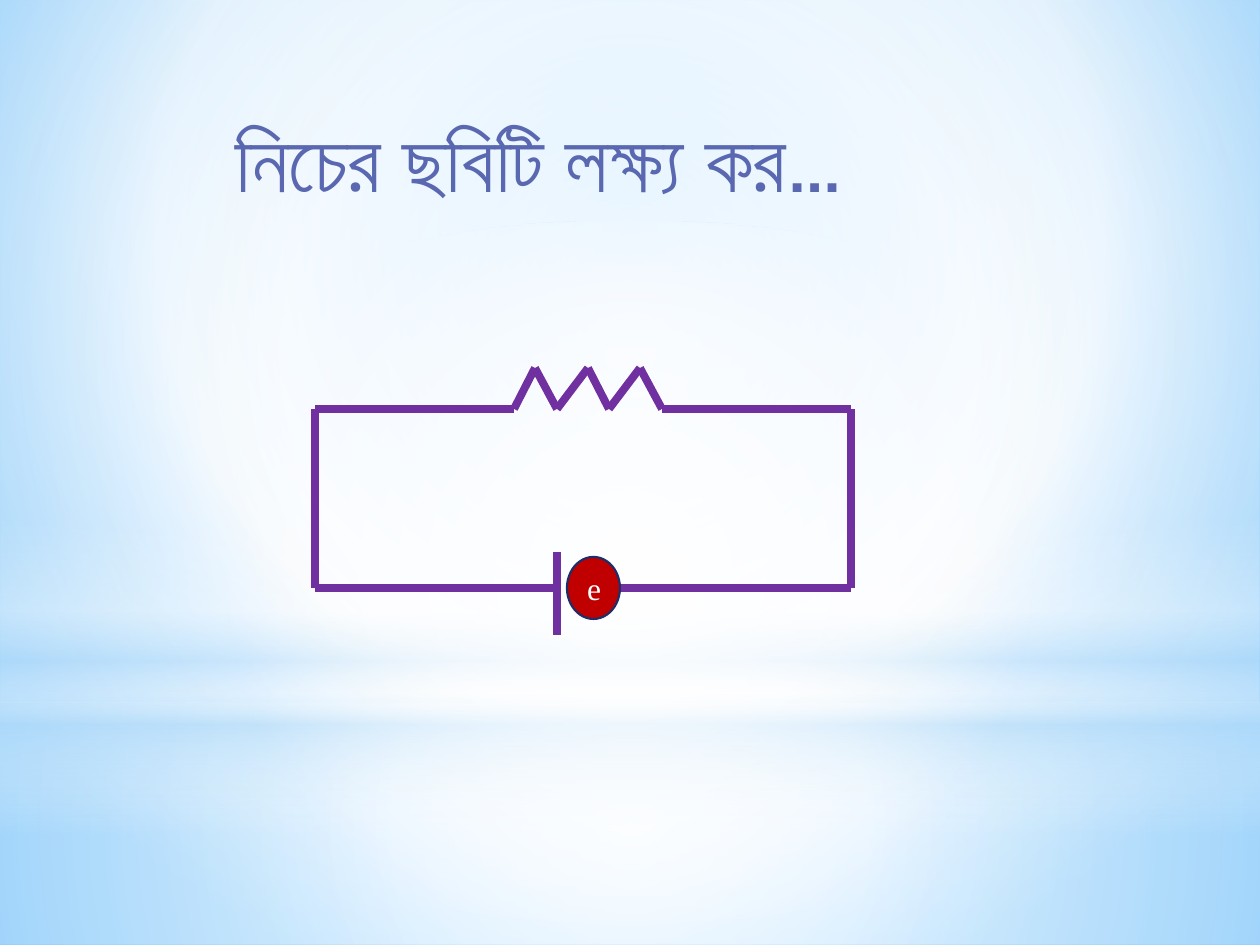
import dataclasses
import itertools

import lxml.etree
import pptx
import pptx.dml.color
import pptx.enum.shapes
import pptx.enum.text
import pptx.oxml.ns
import pptx.util

PX = 914400 / 126
SHAPES = pptx.enum.shapes.MSO_SHAPE
CENTRE = (50, 50, 50, 50)


@dataclasses.dataclass(frozen=True)
class Theme:
    """Colours, fonts and sizes of the slide."""
    title: str = "5968B0"
    wire: str = "7030A0"
    source: str = "C00000"
    source_edge: str = "1F2E69"
    white: str = "FFFFFF"
    mist: str = "B4DCFA"
    sky: str = "9ED5FF"
    deep_sky: str = "5BB9FF"
    title_font: str = "Arial"
    label_font: str = "Times New Roman"
    title_size: int = 48
    label_size: int = 18
    wire_width: float = 4.5
    edge_width: float = 1.25


THEME = Theme()


def px(length):
    """Turn px into EMU."""
    return pptx.util.Emu(round(length * PX))


def rgb(colour):
    """Turn a hex string into a colour."""
    return pptx.dml.color.RGBColor.from_string(colour)


def add_child(parent, tag, **attributes):
    """Append a drawing element with the given attributes."""
    values = {name: str(value) for name, value in attributes.items()}
    return lxml.etree.SubElement(parent, pptx.oxml.ns.qn(tag), values)


def set_gradient(fill, properties, stops, focus=None):
    """Fill with (position, colour, opacity) stops, radial around focus or downward."""
    fill.background()
    empty = properties.find(pptx.oxml.ns.qn("a:noFill"))
    gradient = add_child(properties, "a:gradFill", rotWithShape=1)
    properties.replace(empty, gradient)
    stop_list = add_child(gradient, "a:gsLst")
    for position, colour, opacity in stops:
        stop = add_child(stop_list, "a:gs", pos=position * 1000)
        tint = add_child(stop, "a:srgbClr", val=colour)
        if opacity < 100:
            add_child(tint, "a:alpha", val=opacity * 1000)
    if focus:
        radial = add_child(gradient, "a:path", path="circle")
        edges = {side: edge * 1000 for side, edge in zip("ltrb", focus)}
        add_child(radial, "a:fillToRect", **edges)
    else:
        add_child(gradient, "a:lin", ang=5400000, scaled=0)


def add_plain_shape(slide, kind, box):
    """Add a preset shape without shadow."""
    shape = slide.shapes.add_shape(kind, *map(px, box))
    shape.shadow.inherit = False
    return shape


def add_backdrop(slide, box):
    """Lay the sky gradient and its glowing layers in the box."""
    left, top, width, height = box
    white, mist = THEME.white, THEME.mist
    sky = [(0, THEME.sky, 100), (60, white, 100), (100, THEME.deep_sky, 100)]
    background = slide.background.fill
    background.background()
    properties = slide.element.find(".//" + pptx.oxml.ns.qn("p:bgPr"))
    set_gradient(background, properties, sky, (20, 10, 20, 60))
    horizon = 703
    layers = [
        (SHAPES.RECTANGLE, horizon, height - horizon, CENTRE,
         [(0, white, 91), (37, white, 76), (100, mist, 79)]),
        (SHAPES.RECTANGLE, 0, horizon, CENTRE,
         [(0, white, 89), (48, white, 62), (100, mist, 79)]),
        (SHAPES.RECTANGLE, 519, 315, None,
         [(0, white, 0), (29, white, 30), (45, mist, 40),
          (55, white, 26), (65, mist, 60), (100, white, 0)]),
        (SHAPES.OVAL, 221, horizon, CENTRE, [(0, white, 100), (56, white, 0)]),
    ]
    for kind, offset, layer_height, focus, stops in layers:
        layer = add_plain_shape(slide, kind, (left, top + offset, width, layer_height))
        layer.line.fill.background()
        set_gradient(layer.fill, layer.element.spPr, stops, focus)


def add_run(paragraph, text, font_name, size, colour):
    """Add one formatted run."""
    run = paragraph.add_run()
    run.text = text
    run.font.name = font_name
    run.font.size = pptx.util.Pt(size)
    run.font.color.rgb = rgb(colour)


def add_title(slide, box, text):
    """Place the title placeholder in the box, in front of the backdrop."""
    title = slide.shapes.title
    title.element.getparent().append(title.element)
    title.left, title.top, title.width, title.height = map(px, box)
    frame = title.text_frame
    frame.word_wrap = True
    frame.auto_size = pptx.enum.text.MSO_AUTO_SIZE.SHAPE_TO_FIT_TEXT
    frame.vertical_anchor = pptx.enum.text.MSO_ANCHOR.TOP
    paragraph = frame.paragraphs[0]
    paragraph.alignment = pptx.enum.text.PP_ALIGN.LEFT
    add_run(paragraph, text, THEME.title_font, THEME.title_size, THEME.title)


def add_wire(group, points):
    """Join successive points with straight connectors."""
    for start, end in itertools.pairwise(points):
        wire = group.shapes.add_connector(
            pptx.enum.shapes.MSO_CONNECTOR.STRAIGHT, *map(px, start + end))
        wire.line.color.rgb = rgb(THEME.wire)
        wire.line.width = pptx.util.Pt(THEME.wire_width)
        add_child(wire.element.spPr, "a:effectLst")


def add_circuit(slide, box):
    """Draw the loop with its resistor, cell plates and source in the box."""
    left, top, width, height = box
    upper, lower = 41, 220
    long_plate, short_plate = 242, 273
    resistor = [(199, upper), (220, 0), (long_plate, upper), (short_plate, 0),
                (294, upper), (325, 0), (347, upper)]
    wires = [
        [(long_plate, lower), (0, lower), (0, upper), *resistor,
         (width, upper), (width, lower), (short_plate, lower)],
        [(long_plate, 184), (long_plate, height)],
        [(short_plate, 197), (short_plate, 243)],
    ]
    group = slide.shapes.add_group_shape()
    for points in wires:
        add_wire(group, [(left + x, top + y) for x, y in points])
    add_source(slide, (left + 252, top + 189, 53, 62), "e")


def add_source(slide, box, label):
    """Draw the labelled round source in the box."""
    source = add_plain_shape(slide, SHAPES.OVAL, box)
    source.fill.solid()
    source.fill.fore_color.rgb = rgb(THEME.source)
    source.line.color.rgb = rgb(THEME.source_edge)
    source.line.width = pptx.util.Pt(THEME.edge_width)
    frame = source.text_frame
    frame.vertical_anchor = pptx.enum.text.MSO_ANCHOR.MIDDLE
    paragraph = frame.paragraphs[0]
    paragraph.alignment = pptx.enum.text.PP_ALIGN.CENTER
    add_run(paragraph, label, THEME.label_font, THEME.label_size, THEME.white)


def main():
    """Build and save the slide."""
    presentation = pptx.Presentation()
    presentation.slide_width, presentation.slide_height = px(1260), px(945)
    slide = presentation.slides.add_slide(presentation.slide_layouts[5])
    add_backdrop(slide, (0, 0, 1260, 945))
    add_circuit(slide, (315, 368, 536, 267))
    add_title(slide, (223, 102, 858, 115), "নিচের ছবিটি লক্ষ্য কর…")
    presentation.save("out.pptx")


if __name__ == "__main__":
    main()
